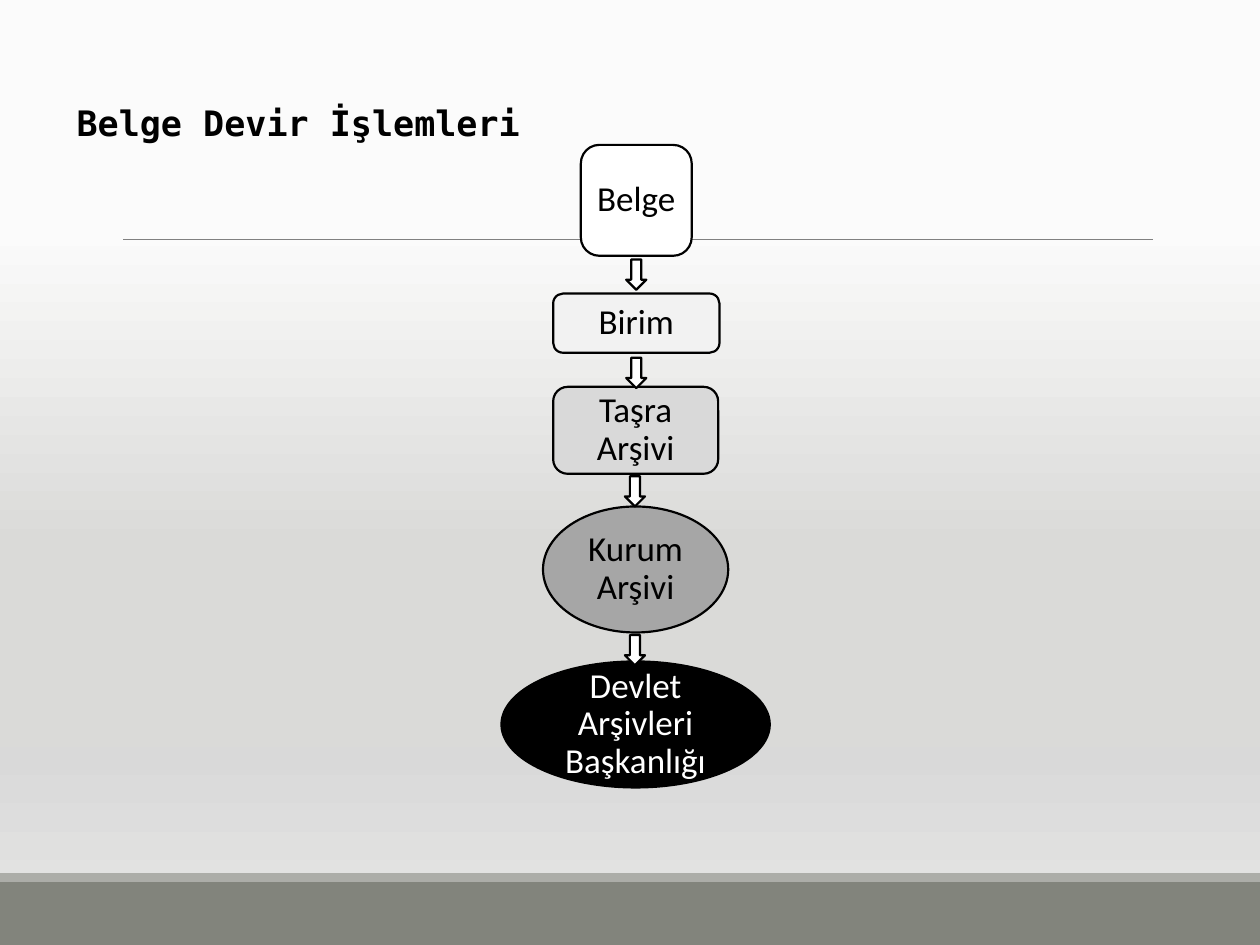
from lxml.etree import SubElement
from pptx import Presentation
from pptx.dml.color import RGBColor
from pptx.enum.shapes import MSO_CONNECTOR as LINK, MSO_SHAPE as KIND
from pptx.enum.text import MSO_ANCHOR as ANCHOR, PP_ALIGN as ALIGN
from pptx.oxml.ns import qn
from pptx.util import Inches, Pt


def color(code):
    """Turn a hex string into a colour."""
    return RGBColor.from_string(code)


def assign(target, values):
    """Set each named value on the target."""
    for name, value in values.items():
        setattr(target, name, value)


class Canvas:
    """Hold the style and the current slide."""

    font = {"name": "Calibri", "size": Pt(20), "bold": False}
    ink = "000000"
    edge = 1.25

    def __init__(self, slide):
        """Start drawing on the slide."""
        self.slide = slide

    def backdrop(self, stops):
        """Fill the background with a downward gradient."""
        fill = self.slide.background.fill
        fill.gradient()
        fill.gradient_angle = 270
        group = self.slide.element.find(".//" + qn("a:gsLst"))
        for stop in list(group):
            group.remove(stop)
        for place, code in stops:
            stop = SubElement(group, qn("a:gs"), pos=str(place * 1000))
            SubElement(stop, qn("a:srgbClr"), val=code)

    def shape(self, kind, box, fill, line=True):
        """Add a filled preset shape."""
        item = self.slide.shapes.add_shape(kind, *map(Inches, box))
        item.shadow.inherit = False
        item.fill.solid()
        item.fill.fore_color.rgb = color(fill)
        if line:
            item.line.color.rgb = color(self.ink)
            item.line.width = Pt(self.edge)
        else:
            item.line.fill.background()
        return item

    def label(self, item, text, ink=ink, frame=None, para=None, font=None):
        """Put one styled paragraph into a shape."""
        body = item.text_frame
        assign(body, {"word_wrap": True, **(frame or {})})
        first = body.paragraphs[0]
        first.text = text
        assign(first, para or {})
        assign(first.font, {**self.font, **(font or {})})
        first.font.color.rgb = color(ink)

    def node(self, kind, box, fill, text, ink, inset):
        """Add a stage of the flow with a centred label."""
        sides = ("left", "top", "right", "bottom")
        frame = {f"margin_{side}": Inches(inset) for side in sides}
        frame["vertical_anchor"] = ANCHOR.MIDDLE
        para = {"alignment": ALIGN.CENTER, "line_spacing": 0.9}
        self.label(self.shape(kind, box, fill), text, ink, frame, para)

    def title(self, box, text):
        """Add the slide heading."""
        item = self.slide.shapes.add_textbox(*map(Inches, box))
        self.label(item, text, font={"name": "DejaVu Sans Mono", "bold": True})

    def rule(self, left, right, top, code, width):
        """Add a thin horizontal line."""
        ends = map(Inches, (left, top, right, top))
        item = self.slide.shapes.add_connector(LINK.STRAIGHT, *ends)
        item.line.color.rgb = color(code)
        item.line.width = Pt(width)
        SubElement(item.element.spPr, qn("a:effectLst"))


def main():
    """Build and save the slide."""
    deck = Presentation()
    assign(deck, {"slide_width": Inches(10), "slide_height": Inches(7.5)})
    page = Canvas(deck.slides.add_slide(deck.slide_layouts[6]))
    page.backdrop([(24, "FBFBFB"), (58, "DADAD8"), (79, "D9D9D9"), (100, "E6E6E5")])
    page.shape(KIND.RECTANGLE, (0, 7, 10, 0.5), "82847C", line=False)
    page.shape(KIND.RECTANGLE, (0, 6.93, 10, 0.07), "ACADA8", line=False)
    page.rule(0.98, 9.15, 1.9, "808080", 0.5)

    card, oval = (KIND.ROUNDED_RECTANGLE, 0.05), (KIND.OVAL, 0.09)
    stages = [
        (card, (4.61, 1.15, 0.88, 0.88), "FFFFFF", "Belge", "000000"),
        (card, (4.39, 2.33, 1.32, 0.47), "F2F2F2", "Birim", "000000"),
        (card, (4.39, 3.07, 1.31, 0.69), "D9D9D9", "Taşra Arşivi", "000000"),
        (oval, (4.31, 4.02, 1.47, 1), "A6A6A6", "Kurum Arşivi", "000000"),
        (oval, (3.98, 5.25, 2.13, 1), "000000", "Devlet Arşivleri Başkanlığı", "FFFFFF"),
    ]
    for (kind, inset), box, fill, text, ink in stages:
        page.node(kind, box, fill, text, ink, inset)

    page.title((0.51, 0.76, 5.67, 0.98), "Belge Devir İşlemleri")
    for left, top in [(4.97, 2.06), (4.97, 2.84), (4.96, 3.78), (4.96, 5.04)]:
        page.shape(KIND.DOWN_ARROW, (left, top, 0.16, 0.24), "FFFFFF")
    deck.save("out.pptx")


if __name__ == "__main__":
    main()
